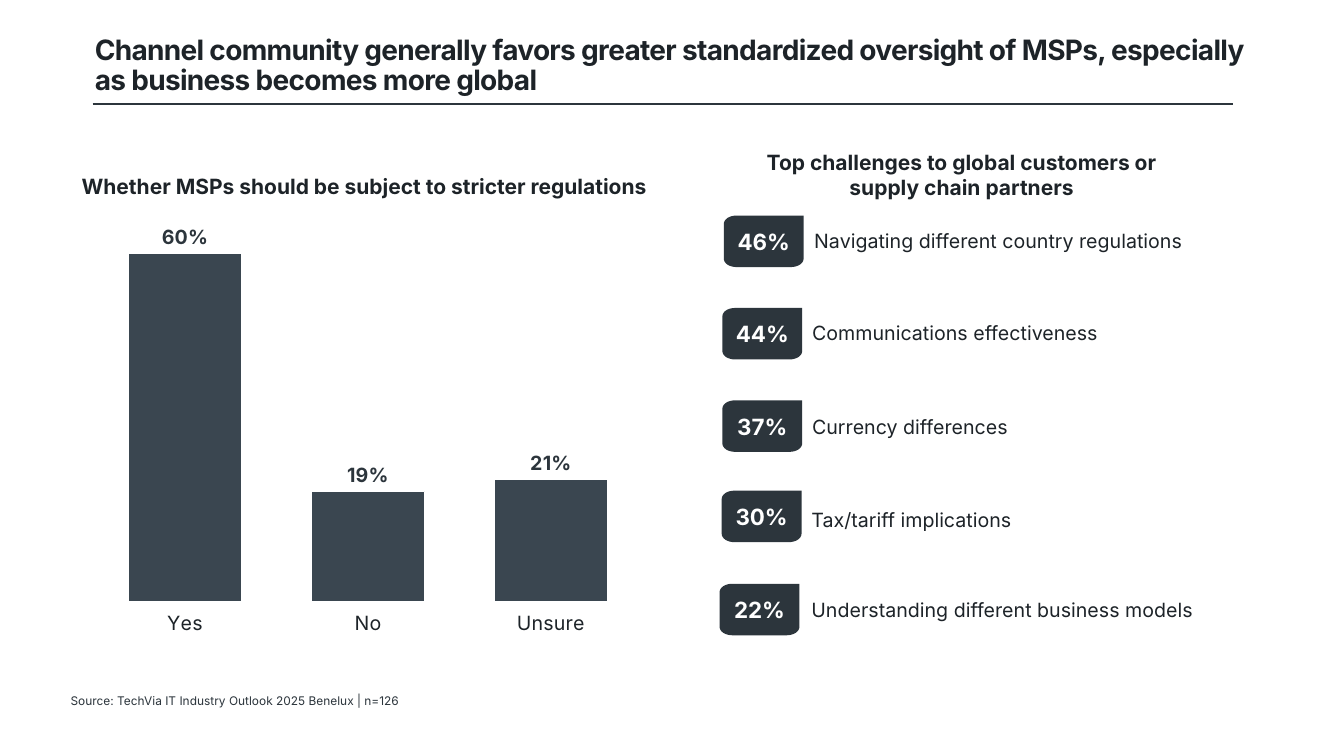
from collections import namedtuple
from math import cos, pi, sin

from lxml.etree import SubElement
from pptx import Presentation
from pptx.chart.data import CategoryChartData
from pptx.dml.color import RGBColor
from pptx.enum.chart import XL_CHART_TYPE, XL_LABEL_POSITION, XL_TICK_MARK
from pptx.enum.shapes import MSO_CONNECTOR
from pptx.enum.text import MSO_ANCHOR, MSO_AUTO_SIZE, PP_ALIGN
from pptx.oxml.ns import qn
from pptx.util import Pt

Box = namedtuple("Box", "left top width height")

FONT = "Inter"
INK = "1D2328"
SLATE = "2C353C"
BAR = "3A4650"
WHITE = "FFFFFF"

ANSWERS = {"Yes": 0.6, "No": 0.19, "Unsure": 0.21}
Challenge = namedtuple("Challenge", "share label badge_left badge_top label_left label_top")
CHALLENGES = [
    Challenge("46%", "Navigating different country regulations", 3, 51, 60.5, 57),
    Challenge("44%", "Communications effectiveness", 2, 117, 59, 123),
    Challenge("37%", "Currency differences", 2, 183, 59, 189.5),
    Challenge("30%", "Tax/tariff implications", 1.5, 247.5, 58.5, 256.5),
    Challenge("22%", "Understanding different business models", 0, 314, 58.5, 320.5),
]


def color(hex_value):
    """Turn a hex string into a colour."""
    return RGBColor.from_string(hex_value)


def style_font(font, size, hex_value, bold=False):
    """Set the face, size, colour and weight of a font."""
    font.name = FONT
    font.size = Pt(size)
    font.bold = bold
    font.color.rgb = color(hex_value)


def write(shape, text, size, hex_value, bold=False, align=PP_ALIGN.LEFT):
    """Put one styled run in a shape and return its paragraph."""
    shape.text_frame.word_wrap = True
    para = shape.text_frame.paragraphs[0]
    para.alignment = align
    span = para.add_run()
    span.text = text
    style_font(span.font, size, hex_value, bold)
    return para


def clear_margins(frame):
    """Remove the insets of a text frame and centre it vertically."""
    frame.margin_left = frame.margin_right = frame.margin_top = frame.margin_bottom = 0
    frame.vertical_anchor = MSO_ANCHOR.MIDDLE


def add_text(page, box, text, size, hex_value, bold=False, align=PP_ALIGN.LEFT):
    """Add a text box that grows with its text."""
    shape = page.shapes.add_textbox(*map(Pt, box))
    write(shape, text, size, hex_value, bold, align)
    shape.text_frame.auto_size = MSO_AUTO_SIZE.SHAPE_TO_FIT_TEXT
    return shape


def add_header(page, box):
    """Place the title and the rule below it."""
    title = page.shapes.title
    title.left, title.top, title.width, title.height = map(Pt, box)
    title.text_frame.auto_size = MSO_AUTO_SIZE.NONE
    title.text_frame.vertical_anchor = MSO_ANCHOR.MIDDLE
    para = write(
        title,
        "Channel community generally favors greater standardized oversight of MSPs, "
        "especially as business becomes more global",
        20, INK, True,
    )
    para.line_spacing = 0.9
    for properties in title.element.xpath(".//a:rPr"):
        properties.set("spc", "-50")
    left, rule_top = box.left + 5.7, box.top + 52
    rule = page.shapes.add_connector(
        MSO_CONNECTOR.STRAIGHT, Pt(left), Pt(rule_top), Pt(left + 814.4), Pt(rule_top)
    )
    rule.line.color.rgb = color(SLATE)
    rule.line.width = Pt(1)
    SubElement(rule.element.spPr, qn("a:effectLst"))


def set_plot_layout(chart, **fractions):
    """Fix the inner plot area as fractions of the chart."""
    area = chart.element.xpath(".//c:plotArea")[0]
    for old in area.findall(qn("c:layout")):
        area.remove(old)
    layout = SubElement(area, qn("c:layout"))
    area.insert(0, layout)
    manual = SubElement(layout, qn("c:manualLayout"))
    settings = {"layoutTarget": "inner", "xMode": "edge", "yMode": "edge", **fractions}
    for name, value in settings.items():
        SubElement(manual, qn(f"c:{name}")).set("val", str(value))


def add_regulation_chart(page, box):
    """Place the heading and the column chart on stricter regulations."""
    add_text(page, Box(box.left, box.top, box.width, 25),
             "Whether MSPs should be subject to stricter regulations",
             15, INK, True, PP_ALIGN.CENTER)
    data = CategoryChartData(number_format="0%")
    data.categories = list(ANSWERS)
    data.add_series("Series 1", list(ANSWERS.values()))
    frame = Box(box.left + 16.5, box.top + 41, 392.4, box.height - 41)
    chart = page.shapes.add_chart(XL_CHART_TYPE.COLUMN_CLUSTERED, *map(Pt, frame), data).chart
    chart.has_legend = False
    chart.has_title = False
    style_font(chart.font, 14, INK)

    chart.value_axis.minimum_scale = 0
    chart.value_axis.maximum_scale = 0.62
    chart.value_axis.has_major_gridlines = False
    chart.value_axis.visible = False
    axis = chart.category_axis
    axis.major_tick_mark = XL_TICK_MARK.OUTSIDE
    axis.format.line.fill.background()
    style_font(axis.tick_labels.font, 14, INK)

    plot = chart.plots[0]
    plot.gap_width = 61
    plot.vary_by_categories = False
    columns = plot.series[0]
    columns.format.fill.solid()
    columns.format.fill.fore_color.rgb = color(BAR)
    columns.format.line.color.rgb = color(WHITE)
    columns.format.line.width = Pt(0.75)
    labels = columns.data_labels
    labels.show_value = True
    labels.position = XL_LABEL_POSITION.OUTSIDE_END
    labels.number_format = "0%"
    labels.number_format_is_linked = False
    style_font(labels.font, 14, SLATE, True)
    set_plot_layout(chart, x=0, y=0.035, w=0.999, h=0.791)


def corner(center_x, center_y, radius_x, radius_y, start):
    """Return the points of a quarter ellipse, clockwise from a start angle."""
    angles = [start + step * pi / 16 for step in range(9)]
    return [(Pt(center_x + radius_x * cos(angle)), Pt(center_y + radius_y * sin(angle)))
            for angle in angles]


def add_badge(page, box, text):
    """Add a badge with three rounded corners and a square top right one."""
    radius_x, radius_y = 9, 6
    right, bottom = box.width - radius_x, box.height - radius_y
    outline = (
        corner(right, bottom, radius_x, radius_y, 0)
        + corner(radius_x, bottom, radius_x, radius_y, pi / 2)
        + corner(radius_x, radius_y, radius_x, radius_y, pi)
    )
    builder = page.shapes.build_freeform(Pt(box.width), 0)
    builder.add_line_segments(outline, close=True)
    badge = builder.convert_to_shape(Pt(box.left), Pt(box.top))
    badge.shadow.inherit = False
    badge.fill.solid()
    badge.fill.fore_color.rgb = color(SLATE)
    badge.line.fill.background()
    clear_margins(badge.text_frame)
    write(badge, text, 16, WHITE, True, PP_ALIGN.CENTER)


def add_challenges(page, box):
    """Place the heading and the rows of challenges with their shares."""
    add_text(page, Box(box.left + 22.4, box.top, 301, 44),
             "Top challenges to global customers or supply chain partners",
             15, INK, True, PP_ALIGN.CENTER)
    for row in CHALLENGES:
        add_badge(page, Box(box.left + row.badge_left, box.top + row.badge_top, 57, 36.8),
                  row.share)
        add_text(page, Box(box.left + row.label_left, box.top + row.label_top,
                           box.width - row.label_left, 24.5), row.label, 14, INK)


def add_source(page, box):
    """Place the source line."""
    source = add_text(page, box, "Source: TechVia IT Industry Outlook 2025 Benelux | n=126",
                      8.5, SLATE)
    source.text_frame.auto_size = MSO_AUTO_SIZE.NONE
    clear_margins(source.text_frame)


def main():
    """Build the slide and save the deck."""
    deck = Presentation()
    deck.slide_width, deck.slide_height = Pt(960), Pt(540)
    page = deck.slides.add_slide(deck.slide_layouts[5])
    add_header(page, Box(60.5, 22.3, 856.8, 50.4))
    add_source(page, Box(50.4, 493.2, 504, 14.4))
    add_regulation_chart(page, Box(50.4, 120.2, 419.8, 365.8))
    add_challenges(page, Box(514, 103, 366, 351))
    deck.save("out.pptx")


if __name__ == "__main__":
    main()
